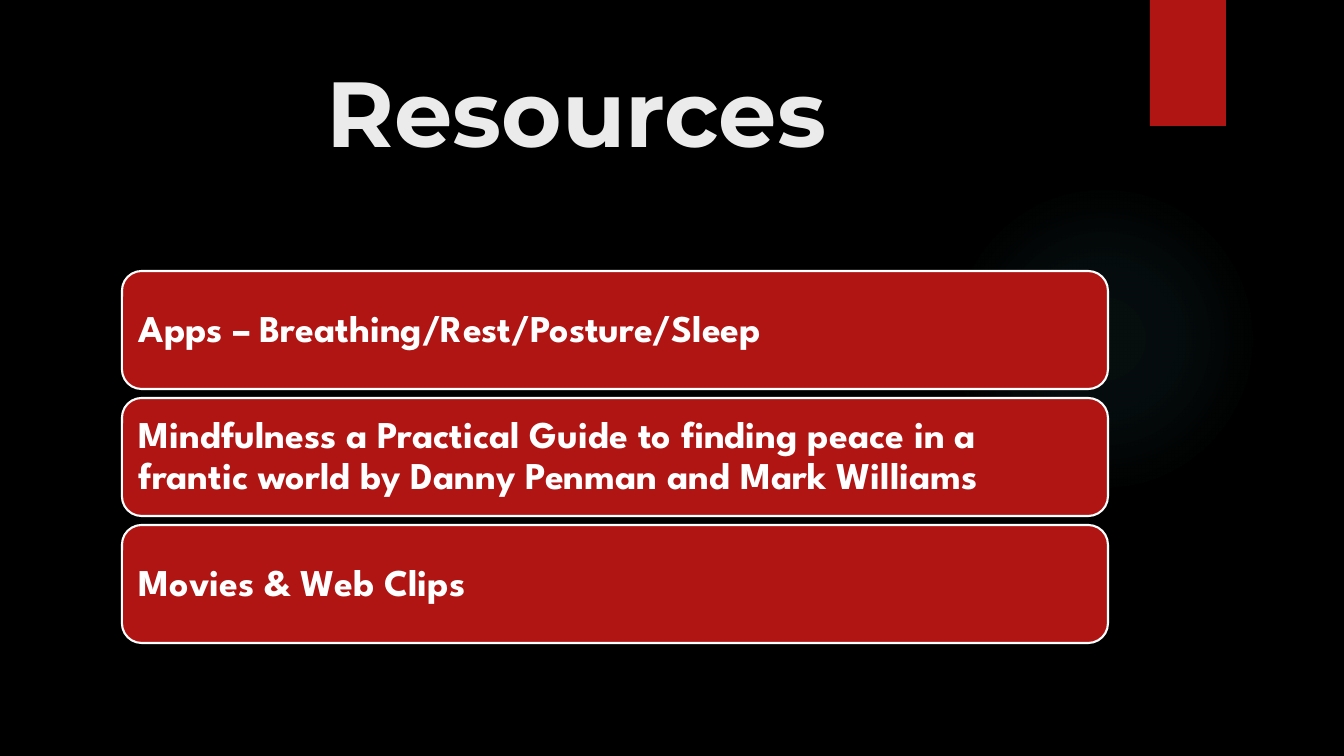
from dataclasses import dataclass

from lxml import etree
from pptx import Presentation
from pptx.dml.color import RGBColor
from pptx.enum.shapes import MSO_SHAPE as Shape
from pptx.enum.text import MSO_ANCHOR as Anchor, PP_ALIGN as Align
from pptx.oxml import parse_xml
from pptx.oxml.ns import nsdecls, qn
from pptx.util import Emu, Pt


@dataclass(frozen=True)
class Theme:
    background: RGBColor = RGBColor(0x00, 0x00, 0x00)
    accent: RGBColor = RGBColor(0xB0, 0x15, 0x13)
    outline: RGBColor = RGBColor(0xFF, 0xFF, 0xFF)
    title: RGBColor = RGBColor(0xEB, 0xEB, 0xEB)
    glow: str = "50B9C1"
    title_font: str = "Montserrat"
    body_font: str = "League Spartan"
    title_size: Pt = Pt(66)
    body_size: Pt = Pt(27)
    outline_width: Pt = Pt(1.5)


def px(length):
    return Emu(round(length * 914400 / 100.8))


def add_block(kind, left, top, width, height):
    block = slide.shapes.add_shape(kind, px(left), px(top), px(width), px(height))
    block.shadow.inherit = False
    block.fill.solid()
    block.fill.fore_color.rgb = theme.accent
    block.line.fill.background()
    return block


theme = Theme()
deck = Presentation()
deck.slide_width, deck.slide_height = px(1344), px(756)
slide = deck.slides.add_slide(deck.slide_layouts[6])
slide.background.fill.solid()
slide.background.fill.fore_color.rgb = theme.background

glow = add_block(Shape.OVAL, 949, 184, 310, 310)
gradient = parse_xml(
    f'<a:gradFill {nsdecls("a")} rotWithShape="1"><a:gsLst/><a:path path="circle">'
    '<a:fillToRect l="50000" t="50000" r="50000" b="50000"/></a:path></a:gradFill>'
)
for position, opacity in ((0, 7), (36, 6), (69, 0)):
    stop = etree.SubElement(gradient[0], qn("a:gs"), pos=str(position * 1000))
    tint = etree.SubElement(stop, qn("a:srgbClr"), val=theme.glow)
    etree.SubElement(tint, qn("a:alpha"), val=str(opacity * 1000))
solid = glow.element.spPr.find(qn("a:solidFill"))
solid.getparent().replace(solid, gradient)

add_block(Shape.RECTANGLE, 1150, 0, 76, 126)

title = slide.shapes.add_textbox(px(72), px(50), px(1037), px(154)).text_frame
title.word_wrap = True
title.margin_left, title.margin_right = px(10), px(38)
title.margin_top = px(5)
heading = title.paragraphs[0]
heading.text = "Resources"
heading.alignment = Align.CENTER
heading.font.name = theme.title_font
heading.font.size = theme.title_size
heading.font.bold = True
heading.font.color.rgb = theme.title

resources = (
    "Apps – Breathing/Rest/Posture/Sleep",
    "Mindfulness a Practical Guide to finding peace in a frantic world by Danny Penman and Mark Williams",
    "Movies & Web Clips",
)
for row, resource in enumerate(resources):
    card = add_block(Shape.ROUNDED_RECTANGLE, 122, 271 + row * 127, 986, 118)
    card.line.color.rgb = theme.outline
    card.line.width = theme.outline_width
    frame = card.text_frame
    frame.word_wrap = True
    frame.vertical_anchor = Anchor.MIDDLE
    frame.margin_left = frame.margin_right = px(11)
    frame.margin_top = frame.margin_bottom = px(11)
    entry = frame.paragraphs[0]
    entry.text = resource
    entry.alignment = Align.LEFT
    entry.line_spacing = 0.9
    entry.font.name = theme.body_font
    entry.font.size = theme.body_size
    entry.font.bold = True
    entry.font.color.rgb = theme.outline

deck.save("out.pptx")
